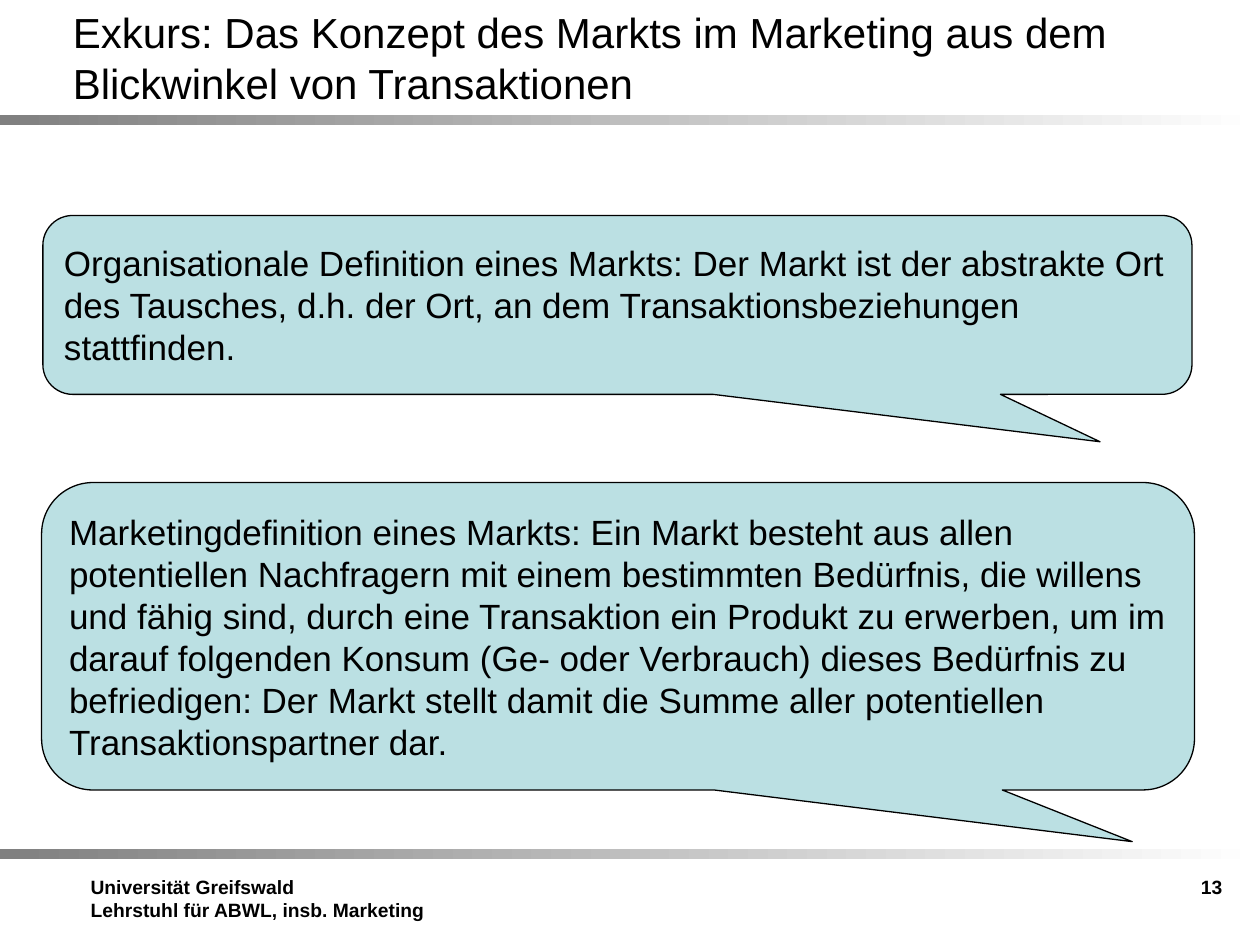
from dataclasses import dataclass

import pptx
import pptx.util
from pptx.dml.color import RGBColor
from pptx.enum.dml import MSO_THEME_COLOR
from pptx.enum.shapes import MSO_SHAPE
from pptx.enum.text import MSO_ANCHOR, PP_ALIGN

WIDTH, HEIGHT = 10, 7.5


@dataclass(frozen=True)
class Theme:
    font: str = "Arial"
    text: RGBColor = RGBColor(0, 0, 0)
    callout: RGBColor = RGBColor(0xBB, 0xE0, 0xE3)
    bar_start: RGBColor = RGBColor(0x80, 0x80, 0x80)
    bar_end: RGBColor = RGBColor(0xFF, 0xFF, 0xFF)
    title_size: int = 24
    body_size: int = 20
    footer_size: int = 11
    line_width: float = 0.75


THEME = Theme()


def inches(box):
    return [pptx.util.Inches(length) for length in box]


def write_text(shape, text, size, bold=False, align=PP_ALIGN.LEFT, anchor=MSO_ANCHOR.TOP):
    frame = shape.text_frame
    frame.word_wrap = True
    frame.vertical_anchor = anchor
    frame.text = text
    for paragraph in frame.paragraphs:
        paragraph.alignment = align
        for run in paragraph.runs:
            run.font.name = THEME.font
            run.font.size = pptx.util.Pt(size)
            run.font.bold = bold
            run.font.color.rgb = THEME.text


def add_title(slide, box, text):
    shape = slide.shapes.add_textbox(*inches(box))
    write_text(shape, text, THEME.title_size, anchor=MSO_ANCHOR.MIDDLE)


def add_gradient_bar(slide, box):
    bar = slide.shapes.add_shape(MSO_SHAPE.RECTANGLE, *inches(box))
    bar.shadow.inherit = False
    bar.line.fill.background()
    bar.fill.gradient()
    bar.fill.gradient_angle = 0
    stops = bar.fill.gradient_stops
    for stop, position, color in zip(stops, (0, 1), (THEME.bar_start, THEME.bar_end)):
        stop.position = position
        stop.color.theme_color = MSO_THEME_COLOR.ACCENT_1
        stop.color.rgb = color


def add_definition(slide, box, tail, text):
    """Add a callout; tail is the tip's offset from the centre as shares of the box."""
    callout = slide.shapes.add_shape(MSO_SHAPE.ROUNDED_RECTANGULAR_CALLOUT, *inches(box))
    callout.shadow.inherit = False
    for index, value in enumerate((*tail, 0.167)):
        callout.adjustments[index] = value
    callout.fill.solid()
    callout.fill.fore_color.rgb = THEME.callout
    callout.line.color.rgb = THEME.text
    callout.line.width = pptx.util.Pt(THEME.line_width)
    write_text(callout, text, THEME.body_size, anchor=MSO_ANCHOR.MIDDLE)


def add_footer(slide, box, sender, number):
    left, top, width, height = box
    sender_width, number_width = 2.91, 2.33
    sender_box = (left, top, sender_width, height)
    number_box = (left + width - number_width, top, number_width, height)
    for part, text, align in (
        (sender_box, sender, PP_ALIGN.LEFT),
        (number_box, number, PP_ALIGN.RIGHT),
    ):
        shape = slide.shapes.add_textbox(*inches(part))
        write_text(shape, text, THEME.footer_size, bold=True, align=align)


def main():
    presentation = pptx.Presentation()
    presentation.slide_width, presentation.slide_height = inches((WIDTH, HEIGHT))
    slide = presentation.slides.add_slide(presentation.slide_layouts[6])

    for top in (0.91, 6.74):
        add_gradient_bar(slide, (0, top, WIDTH, 0.08))
    add_title(
        slide,
        (0.48, 0.14, 9, 0.63),
        "Exkurs: Das Konzept des Markts im Marketing aus dem "
        "Blickwinkel von Transaktionen",
    )
    add_definition(
        slide,
        (0.34, 1.71, 9.12, 1.42),
        (0.42, 0.765),
        "Organisationale Definition eines Markts: Der Markt ist der abstrakte Ort "
        "des Tausches, d.h. der Ort, an dem Transaktionsbeziehungen stattfinden.",
    )
    add_definition(
        slide,
        (0.33, 3.83, 9.15, 2.44),
        (0.446, 0.668),
        "Marketingdefinition eines Markts: Ein Markt besteht aus allen potentiellen "
        "Nachfragern mit einem bestimmten Bedürfnis, die willens und fähig sind, "
        "durch eine Transaktion ein Produkt zu erwerben, um im darauf folgenden "
        "Konsum (Ge- oder Verbrauch) dieses Bedürfnis zu befriedigen: Der Markt "
        "stellt damit die Summe aller potentiellen Transaktionspartner dar.",
    )
    add_footer(
        slide,
        (0.62, 6.9, 9.18, 0.58),
        "Universität Greifswald\nLehrstuhl für ABWL, insb. Marketing",
        "13",
    )
    presentation.save("out.pptx")


if __name__ == "__main__":
    main()
